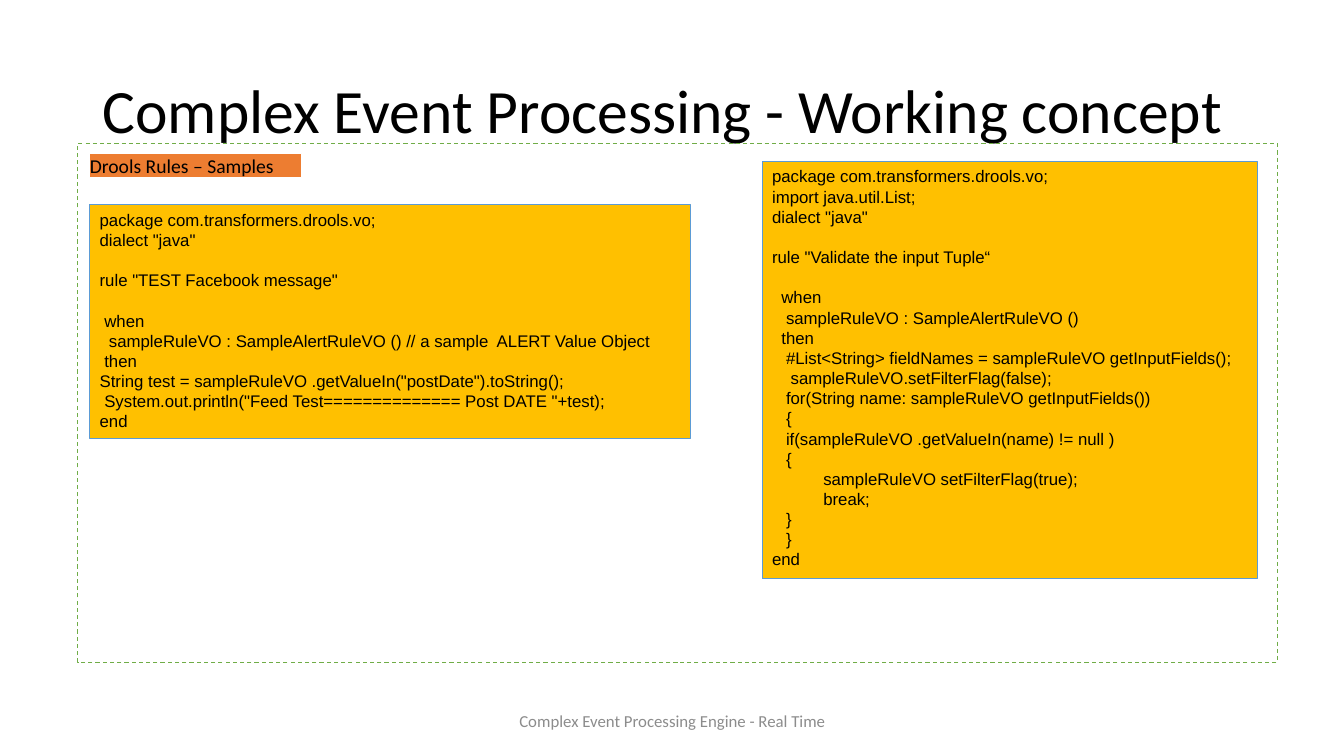
from dataclasses import dataclass

from pptx import Presentation
from pptx.dml.color import RGBColor
from pptx.enum.dml import MSO_LINE
from pptx.enum.shapes import MSO_SHAPE as Preset
from pptx.enum.text import MSO_ANCHOR as Anchor, PP_ALIGN as Align
from pptx.util import Inches, Pt

WIDTH, HEIGHT = Inches(13.33), Inches(7.5)
CODE_SIZE, CODE_LINE = 12, 14.4  # points

ALERT_RULE = '''package com.transformers.drools.vo;
dialect "java"

rule "TEST Facebook message"

 when
  sampleRuleVO : SampleAlertRuleVO () // a sample  ALERT Value Object
 then
String test = sampleRuleVO .getValueIn("postDate").toString();
 System.out.println("Feed Test============== Post DATE "+test);
end'''

TUPLE_RULE = '''package com.transformers.drools.vo;
import java.util.List;
dialect "java"

rule "Validate the input Tuple“

  when
   sampleRuleVO : SampleAlertRuleVO ()
  then
   #List<String> fieldNames = sampleRuleVO getInputFields();
    sampleRuleVO.setFilterFlag(false);
   for(String name: sampleRuleVO getInputFields())
   {
   if(sampleRuleVO .getValueIn(name) != null )
   {
           sampleRuleVO setFilterFlag(true);
           break;
   }
   }
end'''


@dataclass(frozen=True)
class Area:
    """Position and size in percent of the slide's width and height."""
    left: float
    top: float
    width: float
    height: float

    def lengths(self) -> tuple[int, int, int, int]:
        return (int(WIDTH * self.left / 100), int(HEIGHT * self.top / 100),
                int(WIDTH * self.width / 100), int(HEIGHT * self.height / 100))


@dataclass(frozen=True)
class Caption:
    area: Area
    text: str
    size: float
    color: str
    align: Align = Align.LEFT
    line_spacing: float = 1.0


@dataclass(frozen=True)
class CodePanel:
    area: Area
    code: str


def rgb(color: str) -> RGBColor:
    return RGBColor.from_string(color)


def set_font(paragraph, name: str, size: float, color: str) -> None:
    paragraph.font.name = name
    paragraph.font.size = Pt(size)
    paragraph.font.color.rgb = rgb(color)


def add_caption(slide, caption: Caption) -> None:
    frame = slide.shapes.add_textbox(*caption.area.lengths()).text_frame
    frame.word_wrap = True
    frame.vertical_anchor = Anchor.MIDDLE
    paragraph = frame.paragraphs[0]
    paragraph.text = caption.text
    paragraph.alignment = caption.align
    paragraph.line_spacing = caption.line_spacing
    set_font(paragraph, "Calibri", caption.size, caption.color)


def add_rectangle(slide, area: Area, fill: str | None, line: str):
    shape = slide.shapes.add_shape(Preset.RECTANGLE, *area.lengths())
    shape.shadow.inherit = False
    if fill:
        shape.fill.solid()
        shape.fill.fore_color.rgb = rgb(fill)
    else:
        shape.fill.background()
    shape.line.color.rgb = rgb(line)
    shape.line.width = Pt(0.75)
    shape.text_frame.word_wrap = True
    shape.text_frame.vertical_anchor = Anchor.TOP
    return shape


def add_code(slide, panel: CodePanel) -> None:
    frame = add_rectangle(slide, panel.area, "FFC000", "5B9BD5").text_frame
    # Each blank line of code becomes space above the next block
    for block_index, block in enumerate(panel.code.split("\n\n")):
        for line_index, line in enumerate(block.split("\n")):
            first = block_index == line_index == 0
            paragraph = frame.paragraphs[0] if first else frame.add_paragraph()
            paragraph.text = line
            paragraph.alignment = Align.LEFT
            paragraph.line_spacing = Pt(CODE_LINE)
            if block_index and line_index == 0:
                paragraph.space_before = Pt(CODE_LINE)
            set_font(paragraph, "Arial", CODE_SIZE, "000000")


def add_label(slide, area: Area, text: str) -> None:
    frame = add_rectangle(slide, area, "ED7D31", "FFFFFF").text_frame
    frame.margin_left = frame.margin_right = frame.margin_bottom = 0
    frame.margin_top = Inches(0.04)
    paragraph = frame.paragraphs[0]
    paragraph.text = text
    paragraph.alignment = Align.LEFT
    paragraph.line_spacing = 0.85
    paragraph.space_after = Pt(6)
    set_font(paragraph, "Calibri", 14, "000000")


CAPTIONS = [
    Caption(Area(33.16, 92.67, 33.76, 5.33),
            "Complex Event Processing Engine - Real Time", 12, "8C8C8C", Align.CENTER),
    Caption(Area(6.9, 5.33, 86.27, 19.33),
            "Complex Event Processing - Working concept", 44, "000000", line_spacing=0.9),
]
ALERT_PANEL = CodePanel(Area(6.68, 27.07, 44.71, 30.93), ALERT_RULE)
TUPLE_PANEL = CodePanel(Area(56.71, 21.33, 36.83, 55.2), TUPLE_RULE)


def main() -> None:
    presentation = Presentation()
    presentation.slide_width, presentation.slide_height = WIDTH, HEIGHT
    slide = presentation.slides.add_slide(presentation.slide_layouts[6])

    # Footer and title
    for caption in CAPTIONS:
        add_caption(slide, caption)

    # Rule samples inside a dashed frame
    add_code(slide, ALERT_PANEL)
    add_label(slide, Area(6.68, 20.27, 15.75, 3.2), "Drools Rules – Samples")
    frame = add_rectangle(slide, Area(5.78, 18.93, 89.27, 68.67), None, "70AD47")
    frame.line.dash_style = MSO_LINE.DASH
    add_code(slide, TUPLE_PANEL)

    presentation.save("out.pptx")


if __name__ == "__main__":
    main()
